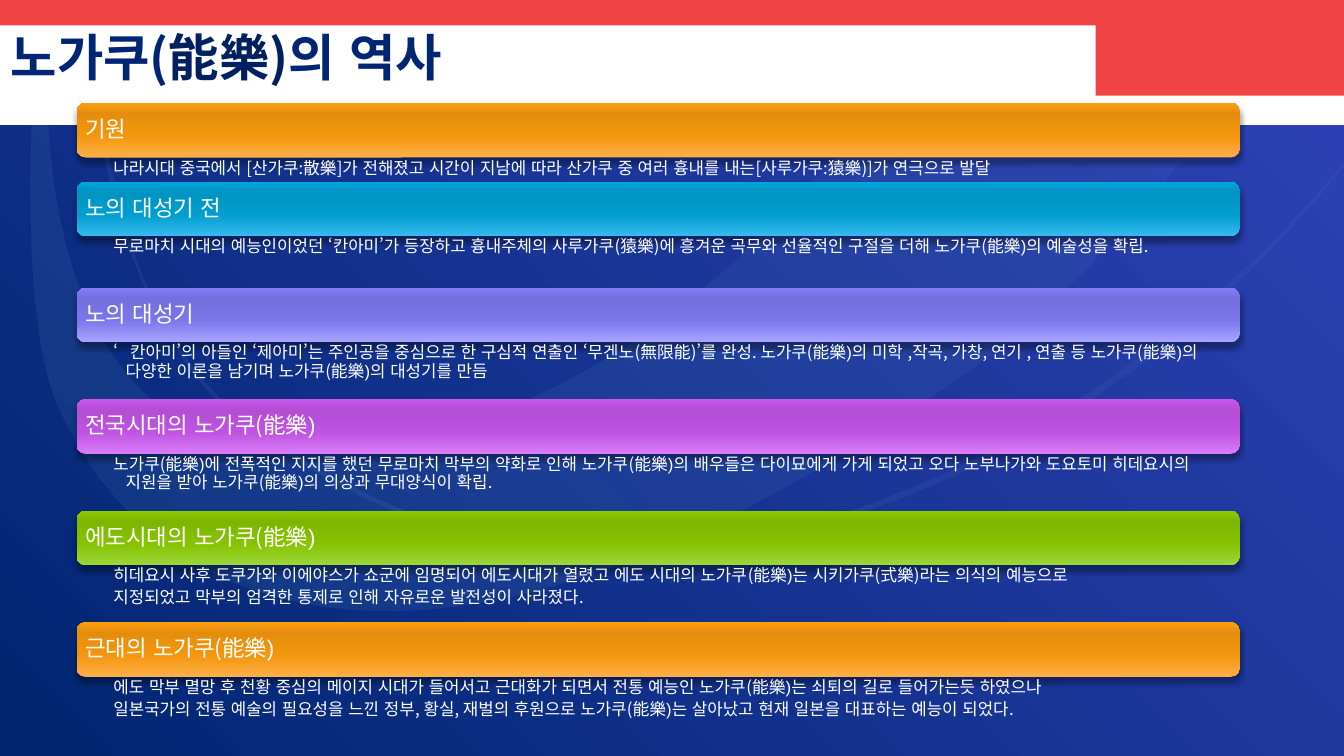
from dataclasses import dataclass

from lxml import etree
from pptx import Presentation
from pptx import util as u
from pptx.dml.color import RGBColor
from pptx.enum import lang, shapes, text
from pptx.oxml.ns import qn

Cm, Pt = u.Cm, u.Pt
KOREAN, LATIN = "Noto Sans CJK KR", "Arial"
HANJA = "能樂)"
QUOTE = "‘"
WIDTH, HEIGHT = 33.87, 19.05
BAR_LEFT, BAR_WIDTH, BAR_HEIGHT = 1.93, 29.31, 1.38
FIRST_TOP = 2.59

COLOURS = {
    "white": "FFFFFF", "red": "F14545", "title": "002673", "title_hanja": "002060",
    "night": "002671", "blue": "2F42B7", "swoosh": "81C4E0", "black": "000000",
}
GRADIENTS = {
    "orange": ("FFAF49", "F4960D", "E48D0C", "FF9F11"),
    "cyan": ("38BAEF", "009ECF", "0094C2", "00A7DC"),
    "violet": ("A9A6FF", "7B76EC", "736FDD", "837DFA"),
    "purple": ("D97DF7", "BF52E2", "B34DD3", "CB57F0"),
    "green": ("9DD73C", "86C200", "7DB500", "8ECD00"),
}
BAR_STOPS = (0, 40, 81, 100)


@dataclass
class Stop:
    position: int
    colour: str
    alpha: int = 100


@dataclass
class Block:
    left: float
    top: float
    width: float
    height: float
    colour: str


@dataclass
class Era:
    heading: str
    gradient: str
    body_height: float
    lines: tuple[str, ...]


@dataclass
class Swoosh:
    """Outline in cm: a segment of one point is a line, of three a Bézier curve."""
    start: tuple
    segments: tuple


SWOOSHES = [
    Swoosh((1.04, 0), (
        ((1.32, 0),),
        ((1.04, 1.7), (0.66, 10.72), (6.68, 11.23)),
        ((12.95, 11.71), (18.92, 7.75), (23.93, 0.03)),
        ((32.79, 0),),
        ((31.45, 1.78), (28.32, 6.48), (24.59, 9.19)),
        ((20.85, 11.91), (15.16, 15.21), (10.13, 15.37)),
        ((5.11, 15.49), (2.57, 12.78), (1.45, 10.19)),
        ((0.36, 7.59), (0.86, 1.27), (1.04, 0)))),
    Swoosh((2.24, -0.03), (
        ((2.13, 2.82), (3.18, 8.48), (6.17, 10.72)),
        ((8.92, 12.62), (13.23, 15.24), (20.24, 13.34)),
        ((27.25, 11.46), (31.55, 7.04), (33.86, 4.19)),
        ((33.86, 4.11), (33.83, 4.22), (33.83, 4.14)),
        ((29.31, 9.45), (24.1, 12.32), (19.51, 13.39)),
        ((15.77, 14.25), (10.74, 14.17), (5.97, 10.41)),
        ((2.64, 7.62), (2.49, 1.98), (2.31, -0.05)),
        ((2.31, -0.08), (2.26, -0.03), (2.24, -0.03)))),
]
HEADER = [
    Block(0, 0.61, WIDTH, 2.54, "white"),
    Block(0, 0, WIDTH, 0.64, "red"),
    Block(27.61, 0, 6.26, 2.41, "red"),
]
ERAS = [
    Era("기원", "orange", 0.61, (
        "나라시대 중국에서 [산가쿠:散樂]가 전해졌고 시간이 지남에 따라 산가쿠 중 여러 흉내를 내는[사루가쿠:猿樂)]가 연극으로 발달",)),
    Era("노의 대성기 전", "cyan", 1.29, (
        "무로마치 시대의 예능인이었던 ‘칸아미’가 등장하고 흉내주체의 사루가쿠(猿樂)에 흥겨운 곡무와 선율적인 구절을 더해 "
        "노가쿠(能樂)의 예술성을 확립.",)),
    Era("노의 대성기", "violet", 1.43, (
        "‘칸아미’의 아들인 ‘제아미’는 주인공을 중심으로 한 구심적 연출인 ‘무겐노(無限能)’를 완성. 노가쿠(能樂)의 미학 ,작곡, "
        "가창, 연기 , 연출 등 노가쿠(能樂)의 다양한 이론을 남기며 노가쿠(能樂)의 대성기를 만듬",)),
    Era("전국시대의 노가쿠(能樂)", "purple", 1.43, (
        "노가쿠(能樂)에 전폭적인 지지를 했던 무로마치 막부의 약화로 인해 노가쿠(能樂)의 배우들은 다이묘에게 가게 되었고 "
        "오다 노부나가와 도요토미 히데요시의 지원을 받아 노가쿠(能樂)의 의상과 무대양식이 확립.",)),
    Era("에도시대의 노가쿠(能樂)", "green", 1.43, (
        "히데요시 사후 도쿠가와 이에야스가 쇼군에 임명되어 에도시대가 열렸고 에도 시대의 노가쿠(能樂)는 시키가쿠(式樂)라는 의식의 예능으로",
        "지정되었고 막부의 엄격한 통제로 인해 자유로운 발전성이 사라졌다.")),
    Era("근대의 노가쿠(能樂)", "orange", 1.57, (
        "에도 막부 멸망 후 천황 중심의 메이지 시대가 들어서고 근대화가 되면서 전통 예능인 노가쿠(能樂)는 쇠퇴의 길로 들어가는듯 하였으나",
        "일본국가의 전통 예술의 필요성을 느낀 정부, 황실, 재벌의 후원으로 노가쿠(能樂)는 살아났고 현재 일본을 대표하는 예능이 되었다.")),
]


def add_colour(parent, colour: str, alpha: int) -> None:
    clr = etree.SubElement(parent, qn("a:srgbClr"), val=colour)
    if alpha < 100:
        etree.SubElement(clr, qn("a:alpha"), val=str(alpha * 1000))


def set_gradient(fill, element, stops: list[Stop], angle: int) -> None:
    """Fill with any number of stops; element is the XML that holds the fill."""
    fill.gradient()
    fill.gradient_angle = angle
    gs_list = element.find(".//" + qn("a:gsLst"))
    for gs in list(gs_list):
        gs_list.remove(gs)
    for stop in stops:
        gs = etree.SubElement(gs_list, qn("a:gs"), pos=str(stop.position * 1000))
        add_colour(gs, stop.colour, stop.alpha)


def add_shadow(sp) -> None:
    effects = sp._element.spPr.find(qn("a:effectLst"))
    shadow = etree.SubElement(effects, qn("a:outerShdw"), blurRad=str(Pt(4)),
                              dist=str(Pt(3)), dir="5400000", rotWithShape="0")
    add_colour(shadow, COLOURS["black"], 35)


def add_run(p, words: str, font: str, size: int, colour: str, bold: bool):
    r = p.add_run()
    r.text = words
    r.font.size, r.font.bold, r.font.name = Pt(size), bold, font
    r.font.language_id = lang.MSO_LANGUAGE_ID.KOREAN
    r.font.color.rgb = RGBColor.from_string(COLOURS[colour])
    etree.SubElement(r.font._element, qn("a:ea"), typeface=KOREAN)
    return r


def add_runs(p, words: str, size: int, colour: str, hanja_colour: str,
             hanja_font: str, bold: bool = False) -> None:
    """Give each 能樂) its own run, and a wide gap to a quote that opens the line."""
    if words.startswith(QUOTE):
        r = add_run(p, QUOTE, KOREAN, size, colour, bold)
        r.font._element.set("spc", "860")
        words = words.removeprefix(QUOTE)
    for i, part in enumerate(words.split(HANJA)):
        if i:
            add_run(p, HANJA, hanja_font, size, hanja_colour, bold)
        if part:
            add_run(p, part, KOREAN, size, colour, bold)


def set_frame(tf, left: float, right: float, vertical: float, anchor) -> None:
    tf.word_wrap, tf.auto_size = True, text.MSO_AUTO_SIZE.NONE
    tf.margin_left, tf.margin_right = Cm(left), Cm(right)
    tf.margin_top = tf.margin_bottom = Cm(vertical)
    tf.vertical_anchor = anchor


def add_swoosh(s, swoosh: Swoosh) -> None:
    """Lay all points as lines, then turn each group of three into a curve."""
    start, *points = [(x * 100, y * 100) for x, y in
                      (swoosh.start, *(pt for seg in swoosh.segments for pt in seg))]
    builder = s.shapes.build_freeform(*start, scale=Cm(0.01))
    builder.add_line_segments(points, close=True)
    sp = builder.convert_to_shape()
    lines = iter(sp._element.findall(".//" + qn("a:lnTo")))
    for segment in swoosh.segments:
        group = [next(lines) for _ in segment]
        if len(group) == 3:
            curve = etree.Element(qn("a:cubicBezTo"))
            group[0].addprevious(curve)
            for line in group:
                curve.append(line[0])
                line.getparent().remove(line)
    sp.shadow.inherit = False
    sp.line.fill.background()
    set_gradient(sp.fill, sp._element,
                 [Stop(0, COLOURS["swoosh"], 10), Stop(100, COLOURS["swoosh"], 5)], 45)


def add_block(s, block: Block, kind=shapes.MSO_SHAPE.RECTANGLE):
    sp = s.shapes.add_shape(kind, Cm(block.left), Cm(block.top), Cm(block.width), Cm(block.height))
    sp.shadow.inherit = False
    sp.line.fill.background()
    sp.fill.solid()
    sp.fill.fore_color.rgb = RGBColor.from_string(COLOURS[block.colour])
    return sp


def add_title(s) -> None:
    sp = s.shapes.title
    s.shapes._spTree.append(sp._element)  # bring in front of the header
    sp.left, sp.top, sp.width, sp.height = Cm(0), Cm(0.08), Cm(29.36), Cm(2.69)
    set_frame(sp.text_frame, 0.27, 0.25, 0.13, text.MSO_ANCHOR.MIDDLE)
    p = sp.text_frame.paragraphs[0]
    p.alignment = text.PP_ALIGN.LEFT
    add_runs(p, "노가쿠(能樂)의 역사", 36, "title", "title_hanja", KOREAN, bold=True)


def add_era(s, era: Era, top: float) -> None:
    bar = add_block(s, Block(BAR_LEFT, top, BAR_WIDTH, BAR_HEIGHT, "white"),
                    shapes.MSO_SHAPE.ROUNDED_RECTANGLE)
    colours = GRADIENTS[era.gradient]
    set_gradient(bar.fill, bar._element, [Stop(*pair) for pair in zip(BAR_STOPS, colours)], 90)
    add_shadow(bar)
    set_frame(bar.text_frame, 0.15, 0.15, 0.18, text.MSO_ANCHOR.MIDDLE)
    p = bar.text_frame.paragraphs[0]
    p.alignment, p.line_spacing = text.PP_ALIGN.LEFT, 0.9
    add_runs(p, era.heading, 16, "white", "white", LATIN)

    body = s.shapes.add_textbox(Cm(BAR_LEFT), Cm(top + BAR_HEIGHT), Cm(BAR_WIDTH), Cm(era.body_height))
    tf = body.text_frame
    set_frame(tf, 0.93, 0.23, 0.05, text.MSO_ANCHOR.TOP)
    for i, line in enumerate(era.lines):
        p = tf.add_paragraph() if i else tf.paragraphs[0]
        p.level, p.line_spacing, p.space_after = 1, 0.9, Pt(2.4)
        p._p.get_or_add_pPr().set("marL", str(Cm(0.31)))
        p._p.get_or_add_pPr().set("indent", str(-Cm(0.31)))
        add_runs(p, line, 12, "white", "white", LATIN)


def main() -> None:
    prs = Presentation()
    prs.slide_width, prs.slide_height = Cm(WIDTH), Cm(HEIGHT)
    s = prs.slides.add_slide(prs.slide_layouts[5])
    set_gradient(s.background.fill, s._element,
                 [Stop(0, COLOURS["night"]), Stop(100, COLOURS["blue"])], 45)
    for swoosh in SWOOSHES:
        add_swoosh(s, swoosh)
    for block in HEADER:
        add_block(s, block)
    add_title(s)
    top = FIRST_TOP
    for era in ERAS:
        add_era(s, era, top)
        top += BAR_HEIGHT + era.body_height
    prs.save("out.pptx")


if __name__ == "__main__":
    main()
